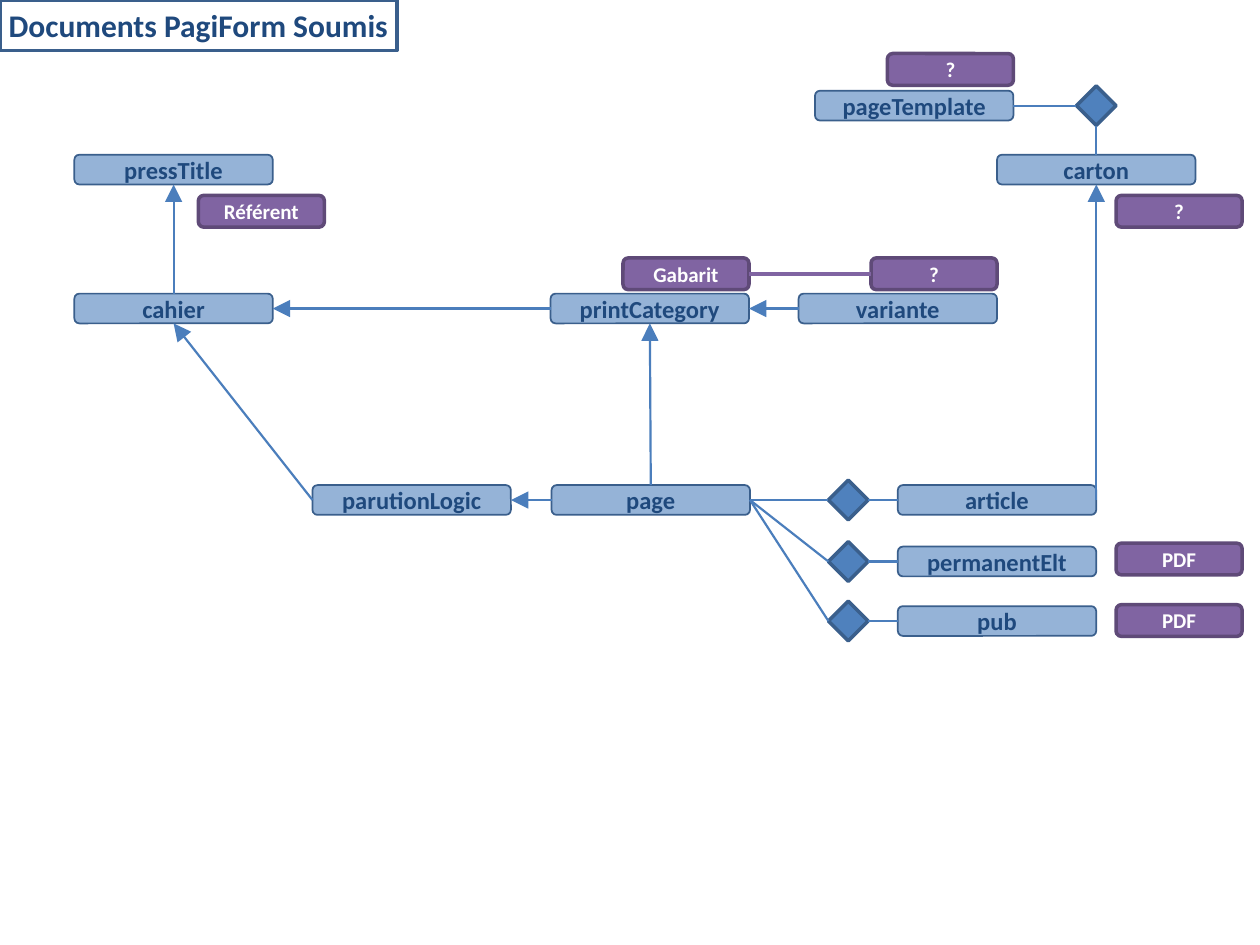
"""Draw the map of submitted document types and their links."""
import dataclasses

import lxml.etree
import pptx
import pptx.dml.color
import pptx.enum.shapes
import pptx.enum.text
import pptx.oxml.ns
import pptx.slide
import pptx.util

Cm = pptx.util.Cm
Form = pptx.enum.shapes.MSO_SHAPE
TOP, LEFT, BASE, RIGHT = range(4)


@dataclasses.dataclass(frozen=True)
class Theme:
    font: str = "Calibri"
    ink: str = "1F497D"
    white: str = "FFFFFF"
    edge: str = "3A5F8C"
    link: str = "4B7EBC"
    node: str = "95B3D7"
    gem: str = "4F81BD"
    tag: str = "8064A2"
    rim: str = "5F4A78"
    title: int = 18
    label: int = 14
    small: int = 12
    thin: float = 1
    line: float = 1.25
    thick: float = 2


THEME = Theme()


@dataclasses.dataclass(frozen=True)
class Style:
    form: int
    wide: float
    high: float
    fill: str | None
    edge: str
    rule: float
    ink: str = THEME.ink
    size: int = THEME.label


NODE = Style(Form.ROUNDED_RECTANGLE, 4, 0.6, THEME.node, THEME.edge, THEME.thin)
TAG = Style(Form.ROUNDED_RECTANGLE, 2.54, 0.64, THEME.tag, THEME.rim, THEME.thick,
            THEME.white, THEME.small)
GEM = Style(Form.DIAMOND, 0.8, 0.8, THEME.gem, THEME.edge, THEME.thick)
TITLE = Style(Form.RECTANGLE, 8, 1.02, None, THEME.edge, THEME.thick, size=THEME.title)


@dataclasses.dataclass(frozen=True)
class Item:
    key: str
    style: Style
    left: float
    top: float
    text: str = ""


@dataclasses.dataclass(frozen=True)
class Link:
    start: str
    exit: int
    end: str
    entry: int
    arrow: bool = False
    ink: str = THEME.link
    rule: float = THEME.line


def node(text: str, left: float, top: float) -> Item:
    return Item(text, NODE, left, top, text)


def gem(key: str, left: float, row: float) -> Item:
    return Item(key, GEM, left, row + (NODE.high - GEM.high) / 2)


ROW1, ROW2, ROW3, ROW4, ROW5 = 3.12, 5.92, 9.78, 11.02, 12.22
HEAD = 1.83
TAGROW = 5.2
SIDE = 22.5
PARTS = {"article": ROW3, "permanentElt": ROW4, "pub": ROW5}

ITEMS = [
    node("pressTitle", 1.5, ROW1),
    node("cahier", 1.5, ROW2),
    node("parutionLogic", 6.3, ROW3),
    node("page", 11.12, ROW3),
    node("printCategory", 11.1, ROW2),
    node("variante", 16.1, ROW2),
    node("carton", 20.1, ROW1),
    node("pageTemplate", 16.43, HEAD),
    gem("joint", 21.7, HEAD),
    *(node(name, 18.1, row) for name, row in PARTS.items()),
    *(gem(name + " joint", 16.7, row) for name, row in PARTS.items()),
    Item("title", TITLE, 0, 0, "Documents PagiForm Soumis"),
    Item("press tag", TAG, 4, 3.94, "Référent"),
    Item("print tag", TAG, 12.56, TAGROW, "Gabarit"),
    Item("variant tag", TAG, 17.56, TAGROW, "?"),
    Item("pub tag", TAG, SIDE, 12.19, "PDF"),
    Item("fixed tag", TAG, SIDE, 10.95, "PDF"),
    Item("head tag", TAG, 17.89, 1.08, "?"),
    Item("carton tag", TAG, SIDE, 3.94, "?"),
]

LINKS = [
    Link("cahier", TOP, "pressTitle", BASE, True),
    Link("parutionLogic", LEFT, "cahier", BASE, True),
    Link("printCategory", LEFT, "cahier", RIGHT, True),
    Link("variante", LEFT, "printCategory", RIGHT, True),
    Link("page", LEFT, "parutionLogic", RIGHT, True),
    Link("page", TOP, "printCategory", BASE, True),
    Link("article", RIGHT, "carton", BASE, True),
    Link("pageTemplate", RIGHT, "joint", LEFT),
    Link("joint", BASE, "carton", TOP),
    *(Link("page", RIGHT, name + " joint", LEFT) for name in PARTS),
    *(Link(name + " joint", RIGHT, name, LEFT) for name in PARTS),
    Link("print tag", RIGHT, "variant tag", LEFT, ink=THEME.tag, rule=THEME.thick),
]


def tint(code: str) -> pptx.dml.color.RGBColor:
    return pptx.dml.color.RGBColor.from_string(code)


def write(shape, text: str, *, size: int, ink: str, bold: bool = True) -> None:
    frame = shape.text_frame
    frame.word_wrap = False
    frame.vertical_anchor = pptx.enum.text.MSO_ANCHOR.MIDDLE
    para = frame.paragraphs[0]
    para.alignment = pptx.enum.text.PP_ALIGN.CENTER
    run = para.add_run()
    run.text = text
    run.font.name = THEME.font
    run.font.size = pptx.util.Pt(size)
    run.font.bold = bold
    run.font.color.rgb = tint(ink)


def stroke(line, ink: str, rule: float) -> None:
    line.color.rgb = tint(ink)
    line.width = pptx.util.Pt(rule)


def place(slide: pptx.slide.Slide, item: Item):
    style = item.style
    shape = slide.shapes.add_shape(style.form, Cm(item.left), Cm(item.top),
                                   Cm(style.wide), Cm(style.high))
    shape.shadow.inherit = False
    if style.fill:
        shape.fill.solid()
        shape.fill.fore_color.rgb = tint(style.fill)
    else:
        shape.fill.background()
    stroke(shape.line, style.edge, style.rule)
    if item.text:
        write(shape, item.text, size=style.size, ink=style.ink)
    return shape


def join(slide: pptx.slide.Slide, link: Link, shapes: dict) -> None:
    kind = pptx.enum.shapes.MSO_CONNECTOR.STRAIGHT
    wire = slide.shapes.add_connector(kind, 0, 0, 0, 0)
    wire.begin_connect(shapes[link.start], link.exit)
    wire.end_connect(shapes[link.end], link.entry)
    stroke(wire.line, link.ink, link.rule)
    qn = pptx.oxml.ns.qn
    props = wire._element.spPr
    if link.arrow:
        tip = lxml.etree.SubElement(props.find(qn("a:ln")), qn("a:tailEnd"))
        tip.set("type", "triangle")
        tip.set("w", "lg")
        tip.set("len", "lg")
    lxml.etree.SubElement(props, qn("a:effectLst"))


def main() -> None:
    deck = pptx.Presentation()
    deck.slide_width, deck.slide_height = Cm(25.4), Cm(19.05)
    slide = deck.slides.add_slide(deck.slide_layouts[6])
    shapes = {item.key: place(slide, item) for item in ITEMS}
    for link in LINKS:
        join(slide, link, shapes)
    deck.save("out.pptx")


if __name__ == "__main__":
    main()
